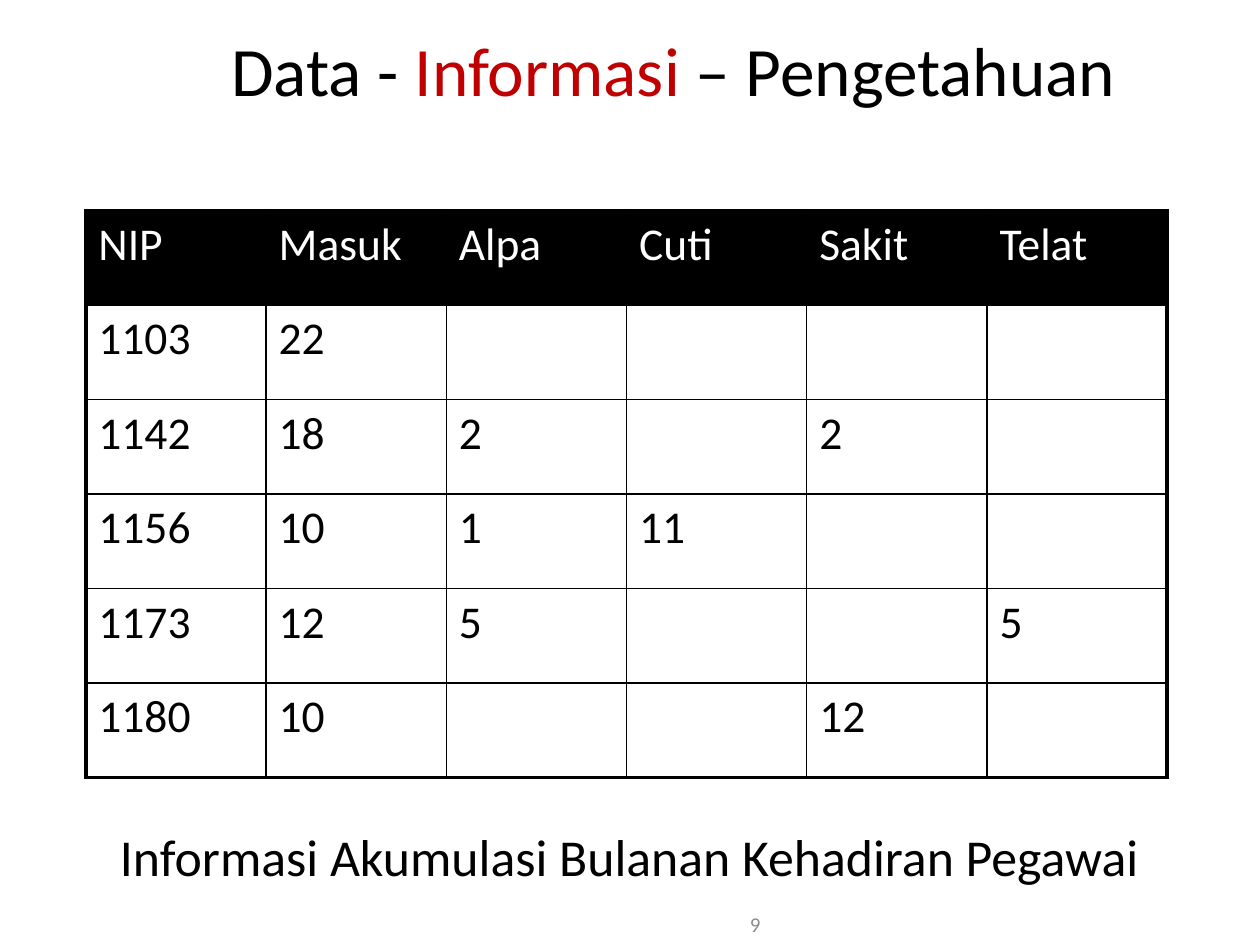
"""Build the attendance slide on data, information and knowledge."""
from dataclasses import dataclass

from pptx import Presentation
from pptx.dml.color import RGBColor
from pptx.enum.text import MSO_ANCHOR, PP_ALIGN
from pptx.oxml.ns import qn
from pptx.util import Cm, Pt
from lxml import etree

LEFT, CENTER, RIGHT = PP_ALIGN.LEFT, PP_ALIGN.CENTER, PP_ALIGN.RIGHT
TOP, MIDDLE = MSO_ANCHOR.TOP, MSO_ANCHOR.MIDDLE

HEADINGS = ["NIP", "Masuk", "Alpa", "Cuti", "Sakit", "Telat"]
ATTENDANCE = [
    ["1103", "22", "", "", "", ""],
    ["1142", "18", "2", "", "2", ""],
    ["1156", "10", "1", "11", "", ""],
    ["1173", "12", "5", "", "", "5"],
    ["1180", "10", "", "", "12", ""],
]


@dataclass(frozen=True)
class Theme:
    font: str = "Calibri"
    ink: str = "000000"
    paper: str = "FFFFFF"
    accent: str = "C00000"
    muted: str = "8C8C8C"
    title_size: float = 39.6
    caption_size: float = 29.6
    table_size: float = 26
    number_size: float = 12
    outer_line: float = 2.25
    inner_line: float = 1


def add_text(paragraph, text, *, font, size, color, align=LEFT):
    paragraph.alignment = align
    run = paragraph.add_run()
    run.text = text
    run.font.name = font
    run.font.size = Pt(size)
    run.font.color.rgb = RGBColor.from_string(color)


def add_border(cell, position, side, width, color):
    line = etree.Element(qn(f"a:ln{side}"), w=str(Pt(width)))
    fill = etree.SubElement(line, qn("a:solidFill"))
    etree.SubElement(fill, qn("a:srgbClr"), val=color)
    cell._tc.get_or_add_tcPr().insert(position, line)


class SlideBuilder:
    def __init__(self, slide, theme):
        self.slide = slide
        self.theme = theme

    def text(self, box, parts, *, size, align=CENTER, anchor=TOP):
        frame = self.slide.shapes.add_textbox(*map(Cm, box)).text_frame
        frame.word_wrap = True
        frame.vertical_anchor = anchor
        for words, color in parts:
            add_text(frame.paragraphs[0], words, font=self.theme.font,
                     size=size, color=color, align=align)

    def table(self, box, records):
        last_row, last_column = len(records) - 1, len(records[0]) - 1
        table = self.slide.shapes.add_table(
            last_row + 1, last_column + 1, *map(Cm, box)).table
        table.first_row = table.horz_banding = False
        for r, record in enumerate(records):
            for c, value in enumerate(record):
                outer_sides = {"L": c == 0, "R": c == last_column,
                               "T": r == 0, "B": r == last_row}
                self.cell(table.cell(r, c), value, r == 0, outer_sides)

    def cell(self, cell, value, is_heading, outer_sides):
        theme = self.theme
        if is_heading:
            cell.fill.solid()
            cell.fill.fore_color.rgb = RGBColor.from_string(theme.ink)
        else:
            cell.fill.background()
        for position, (side, is_outer) in enumerate(outer_sides.items()):
            width = theme.outer_line if is_outer else theme.inner_line
            add_border(cell, position, side, width, theme.ink)
        if value:
            add_text(cell.text_frame.paragraphs[0], value, font=theme.font,
                     size=theme.table_size,
                     color=theme.paper if is_heading else theme.ink)


def main():
    theme = Theme()
    deck = Presentation()
    deck.slide_width, deck.slide_height = Cm(25.4), Cm(19.05)
    builder = SlideBuilder(deck.slides.add_slide(deck.slide_layouts[6]), theme)

    builder.text((1.75, 0.43, 23.65, 1.9),
                 [("Data - ", theme.ink), ("Informasi", theme.accent),
                  (" – Pengetahuan", theme.ink)],
                 size=theme.title_size, anchor=MIDDLE)
    builder.text((1.75, 16.51, 21.9, 1.57),
                 [("Informasi Akumulasi Bulanan Kehadiran Pegawai", theme.ink)],
                 size=theme.caption_size)
    builder.text((9.86, 18.21, 5.72, 0.84), [("9", theme.muted)],
                 size=theme.number_size, align=RIGHT, anchor=MIDDLE)
    builder.table((1.73, 4.24, 21.8, 11.43), [HEADINGS, *ATTENDANCE])
    deck.save("out.pptx")


if __name__ == "__main__":
    main()
